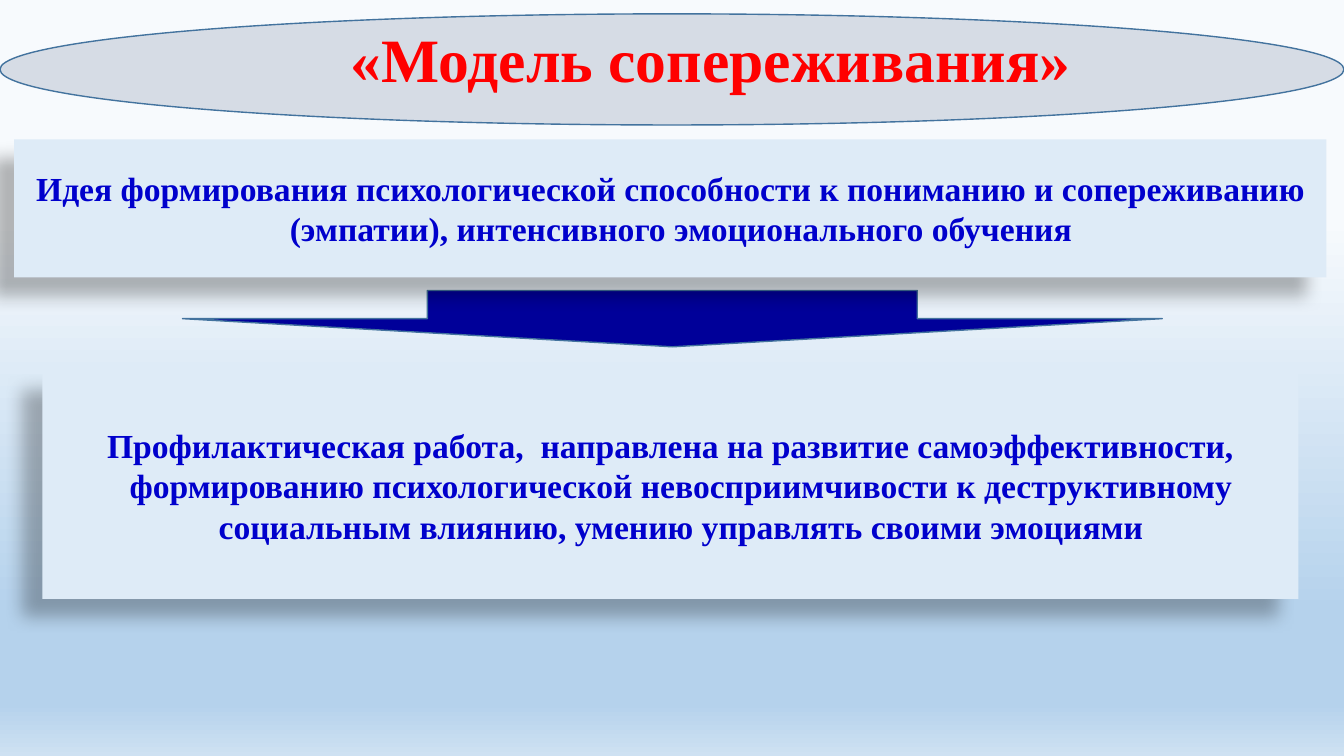
from dataclasses import dataclass

from lxml.etree import SubElement
from pptx import Presentation
from pptx.dml.color import RGBColor
from pptx.enum.shapes import MSO_SHAPE
from pptx.enum.text import MSO_ANCHOR, PP_ALIGN
from pptx.oxml.ns import qn
from pptx.util import Cm, Pt


@dataclass(frozen=True)
class Theme:
    font: str = "Times New Roman"
    title_size: int = 44
    body_size: int = 24
    title_color: str = "FF0000"
    body_color: str = "0000CC"
    ellipse_fill: str = "D6DCE5"
    panel_fill: str = "DEEBF7"
    arrow_fill: str = "000099"
    outline: str = "43739E"
    shadow: str = "000000"
    # Background stops: percent from the top, colour
    background: tuple = ((29, "F7FAFD"), (81, "B5D2EC"), (93, "B5D2EC"), (100, "CEE1F2"))


theme = Theme()


def add_filled_shape(kind, left, top, width, height, fill, outline=None):
    shape = slide.shapes.add_shape(kind, Cm(left), Cm(top), Cm(width), Cm(height))
    shape.shadow.inherit = False
    shape.fill.solid()
    shape.fill.fore_color.rgb = RGBColor.from_string(fill)
    if outline:
        shape.line.color.rgb = RGBColor.from_string(outline)
        shape.line.width = Pt(1)
    else:
        shape.line.fill.background()
    return shape


def write_text(shape, text, size, color):
    shape.text_frame.word_wrap = True
    paragraph = shape.text_frame.paragraphs[0]
    paragraph.text = text
    paragraph.alignment = PP_ALIGN.CENTER
    font = paragraph.runs[0].font
    font.name = theme.font
    font.size = Pt(size)
    font.bold = True
    font.color.rgb = RGBColor.from_string(color)
    return paragraph


presentation = Presentation()
presentation.slide_width = Cm(33.87)
presentation.slide_height = Cm(19.05)
slide = presentation.slides.add_slide(presentation.slide_layouts[6])

# Background gradient, top to bottom
background_fill = slide.background.fill
background_fill.gradient()
background_fill.gradient_angle = 270
stop_list = slide.element.find(".//" + qn("a:gsLst"))
for stop in list(stop_list):
    stop_list.remove(stop)
for percent, color in theme.background:
    stop = SubElement(stop_list, qn("a:gs"), pos=str(percent * 1000))
    SubElement(stop, qn("a:srgbClr"), val=color)

# Title over its ellipse
add_filled_shape(MSO_SHAPE.OVAL, 0, 0.35, 33.87, 2.8, theme.ellipse_fill, theme.outline)
title = slide.shapes.add_textbox(Cm(4.6), Cm(0.4), Cm(26.62), Cm(2.13))
title_paragraph = write_text(title, "«Модель сопереживания»", theme.title_size, theme.title_color)
title_paragraph.space_before = Pt(4)

# Arrow from the idea to the work
add_filled_shape(MSO_SHAPE.DOWN_ARROW, 4.6, 7.32, 24.69, 1.42, theme.arrow_fill, theme.outline)

# Text panels with a soft shadow to the lower left
panels = (
    (0.36, 3.51, 33.07, 3.48,
     "Идея формирования психологической способности к пониманию и сопереживанию "
     "(эмпатии), интенсивного эмоционального обучения"),
    (1.07, 9.37, 31.65, 5.72,
     "Профилактическая работа,  направлена на развитие самоэффективности, "
     "формированию психологической невосприимчивости к деструктивному "
     "социальным влиянию, умению управлять своими эмоциями"),
)
for left, top, width, height, text in panels:
    panel = add_filled_shape(MSO_SHAPE.RECTANGLE, left, top, width, height, theme.panel_fill)
    panel.text_frame.vertical_anchor = MSO_ANCHOR.MIDDLE
    paragraph = write_text(panel, text, theme.body_size, theme.body_color)
    properties = paragraph._p.get_or_add_pPr()
    properties.set("marL", str(Cm(0.53)))
    properties.set("indent", str(Cm(-0.53)))

    effects = panel._element.spPr.find(qn("a:effectLst"))
    shadow = SubElement(effects, qn("a:outerShdw"), blurRad=str(Pt(11.8)),
                        dist=str(Pt(19.7)), dir=str(141 * 60000), rotWithShape="0")
    shadow_color = SubElement(shadow, qn("a:srgbClr"), val=theme.shadow)
    SubElement(shadow_color, qn("a:alpha"), val="28000")

presentation.save("out.pptx")
